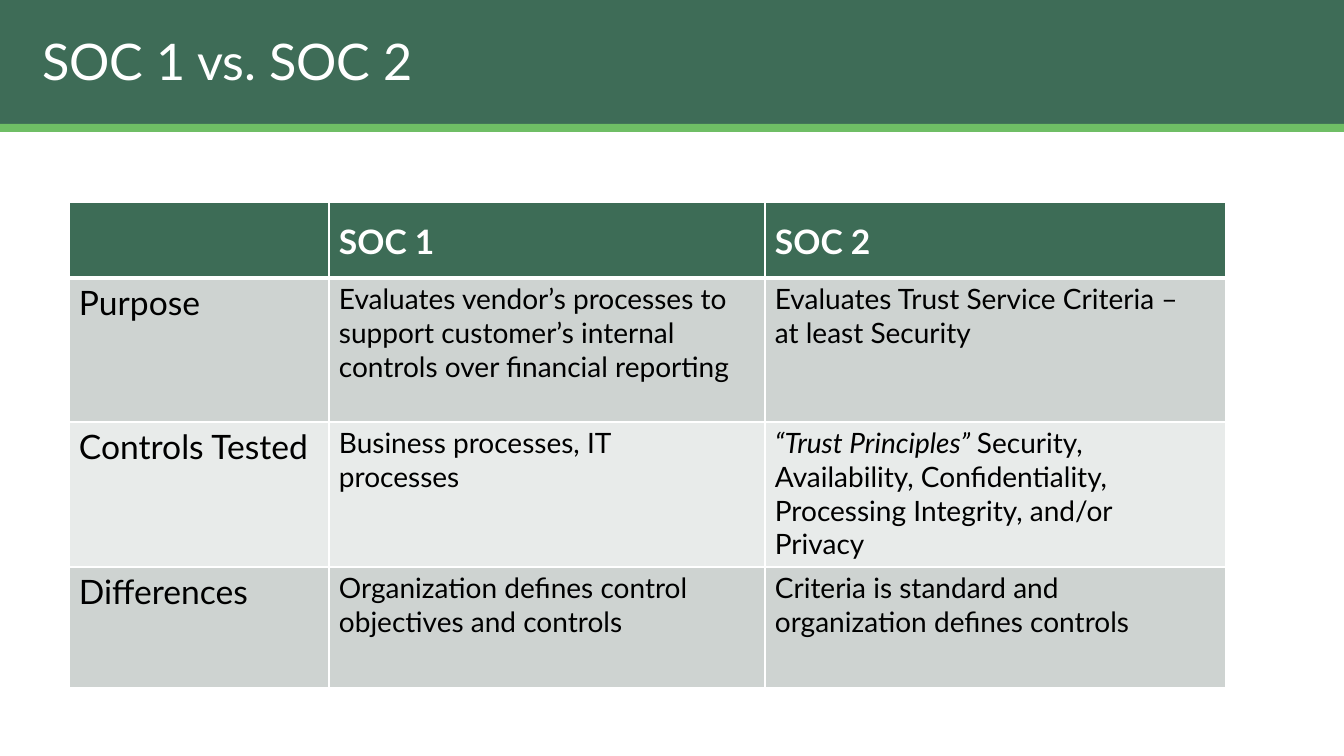
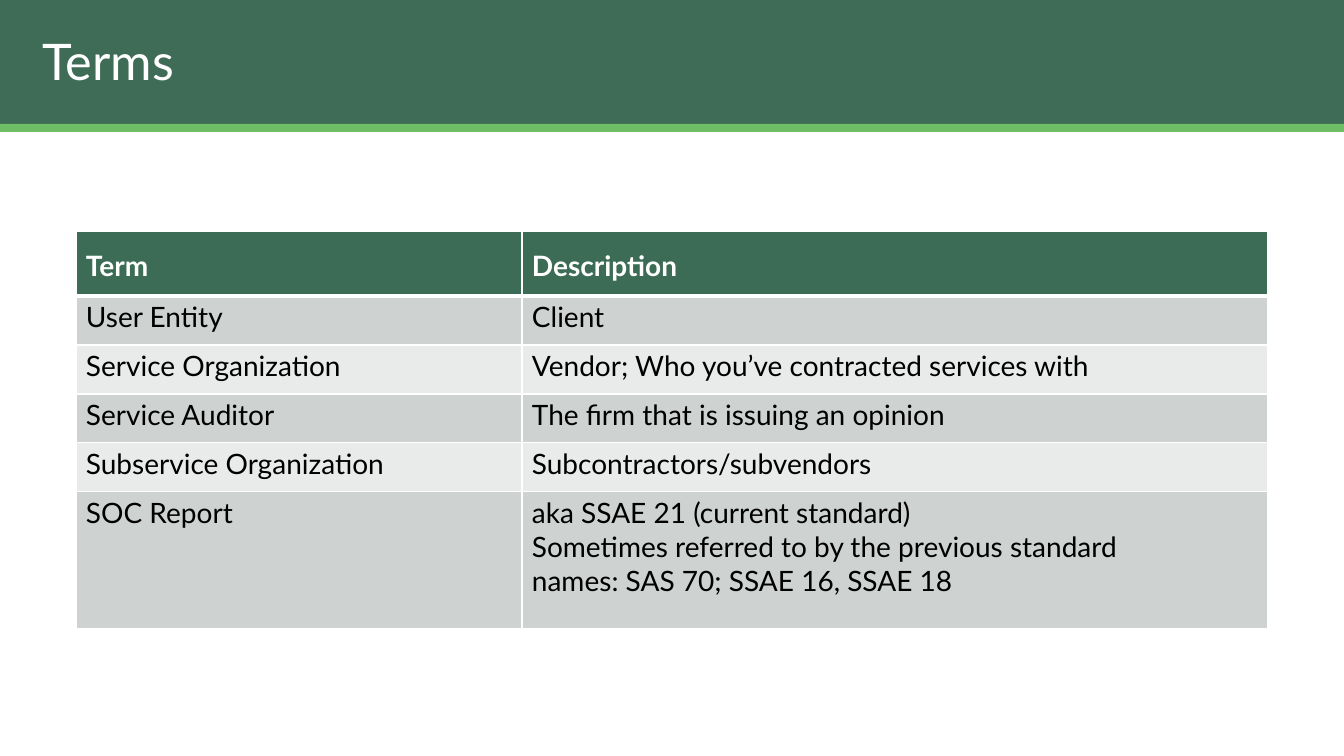
from dataclasses import dataclass
from typing import NamedTuple

from lxml import etree
from pptx import Presentation
from pptx import util as u
from pptx.dml.color import RGBColor
from pptx.enum import shapes, text
from pptx.oxml.ns import qn

SLIDE_WIDTH, SLIDE_HEIGHT = 1344, 756
EMU_PER_PX = u.Inches(1) / 100.8
FONT = "Lato"
COLORS = {
    "band": "3E6C57",
    "accent": "6FBE65",
    "header": "3D6C56",
    "odd_row": "CED3D1",
    "even_row": "E8EBEA",
    "white": "FFFFFF",
    "black": "000000",
}
TITLE_LAYOUT = 5


class Band(NamedTuple):
    top: int
    height: int
    color: str


class Column(NamedTuple):
    width: int
    right_inset: int
    size: int


class Lead(NamedTuple):
    """Cell text that opens with words in italics."""
    italic: str
    plain: str


CellText = str | Lead


@dataclass(frozen=True)
class Grid:
    title: str
    left: int
    top: int
    header_size: int
    columns: list[Column]
    heights: list[int]
    rows: list[list[CellText]]


BANDS = [Band(0, 126, "band"), Band(124, 8, "accent")]

GRIDS = [
    Grid(
        "SOC 1 vs. SOC 2", 69, 202, 24,
        [Column(260, 0, 24), Column(436, 33, 20), Column(461, 33, 20)],
        [76, 144, 145, 121],
        [
            ["", "SOC 1", "SOC 2"],
            ["Purpose",
             "Evaluates vendor’s processes to support customer’s internal "
             "controls over financial reporting",
             "Evaluates Trust Service Criteria – at least Security"],
            ["Controls Tested",
             "Business processes, IT processes",
             Lead("“Trust Principles” ",
                  "Security, Availability, Confidentiality, "
                  "Processing Integrity, and/or Privacy")],
            ["Differences",
             "Organization defines control objectives and controls",
             "Criteria is standard and organization defines controls"],
        ],
    ),
    Grid(
        "Terms", 76, 231, 20,
        [Column(446, 0, 20), Column(746, 100, 20)],
        [65, 49, 49, 49, 49, 137],
        [
            ["Term", "Description"],
            ["User Entity", "Client"],
            ["Service Organization", "Vendor; Who you’ve contracted services with"],
            ["Service Auditor", "The firm that is issuing an opinion"],
            ["Subservice Organization", "Subcontractors/subvendors"],
            ["SOC Report",
             "aka SSAE 21 (current standard)\n"
             "Sometimes referred to by the previous standard names: "
             "SAS 70; SSAE 16, SSAE 18"],
        ],
    ),
]


def px(length: int) -> u.Emu:
    return u.Emu(round(length * EMU_PER_PX))


def rgb(name: str) -> RGBColor:
    return RGBColor.from_string(COLORS[name])


def set_font(para, size: int, color: str, bold: bool = False) -> None:
    para.font.name = FONT
    para.font.size = u.Pt(size)
    para.font.bold = bold
    para.font.color.rgb = rgb(color)


def add_bands(page) -> None:
    """Draw the bands and move them to the layout, where all pages share them."""
    layout_tree = page.slide_layout.shapes._spTree
    for index, band in enumerate(BANDS):
        shape = page.shapes.add_shape(
            shapes.MSO_SHAPE.RECTANGLE,
            0, px(band.top), px(SLIDE_WIDTH), px(band.height))
        shape.shadow.inherit = False
        shape.fill.solid()
        shape.fill.fore_color.rgb = rgb(band.color)
        shape.line.fill.background()
        layout_tree.insert(2 + index, shape._element)


def set_title(page, words: str) -> None:
    title = page.shapes.title
    title.left, title.top, title.width, title.height = map(px, (32, 18, 989, 92))
    frame = title.text_frame
    frame.text = words
    frame.word_wrap = True
    frame.vertical_anchor = text.MSO_ANCHOR.MIDDLE
    para = frame.paragraphs[0]
    para.alignment = text.PP_ALIGN.LEFT
    para.line_spacing = 0.9
    set_font(para, 36, "white")


def set_borders(cell, row: int) -> None:
    """White cell edges, thicker between the header and the first body row."""
    widths = {"L": 1, "R": 1, "T": 3 if row == 1 else 1, "B": 3 if row == 0 else 1}
    properties = cell._tc.get_or_add_tcPr()
    for side, width in widths.items():
        edge = etree.SubElement(properties, qn(f"a:ln{side}"), w=str(u.Pt(width)))
        fill = etree.SubElement(edge, qn("a:solidFill"))
        etree.SubElement(fill, qn("a:srgbClr"), val=COLORS["white"])


def fill_cell(cell, content: CellText, row: int, column: Column,
              header_size: int) -> None:
    is_header = row == 0
    set_borders(cell, row)
    cell.fill.solid()
    cell.fill.fore_color.rgb = rgb(
        "header" if is_header else "odd_row" if row % 2 else "even_row")
    cell.margin_left, cell.margin_top = px(10), px(4)
    cell.margin_right, cell.margin_bottom = px(column.right_inset), 0
    cell.vertical_anchor = (
        text.MSO_ANCHOR.MIDDLE if is_header else text.MSO_ANCHOR.TOP)
    frame = cell.text_frame
    if isinstance(content, Lead):
        para = frame.paragraphs[0]
        span = para.add_run()
        span.text = content.italic
        span.font.italic = True
        para.add_run().text = content.plain
    else:
        frame.text = content
    for para in frame.paragraphs:
        if is_header:
            set_font(para, header_size, "white", bold=True)
        else:
            set_font(para, column.size, "black")


def add_grid(page, grid: Grid) -> None:
    width = sum(column.width for column in grid.columns)
    table = page.shapes.add_table(
        len(grid.rows), len(grid.columns),
        px(grid.left), px(grid.top), px(width), px(sum(grid.heights))).table
    table.horz_banding = False
    for index, column in enumerate(grid.columns):
        table.columns[index].width = px(column.width)
    for row, (height, contents) in enumerate(zip(grid.heights, grid.rows)):
        table.rows[row].height = px(height)
        for index, (column, content) in enumerate(zip(grid.columns, contents)):
            fill_cell(table.cell(row, index), content, row, column,
                      grid.header_size)


def main() -> None:
    deck = Presentation()
    deck.slide_width, deck.slide_height = px(SLIDE_WIDTH), px(SLIDE_HEIGHT)
    layout = deck.slide_layouts[TITLE_LAYOUT]
    pages = [deck.slides.add_slide(layout) for _ in GRIDS]
    add_bands(pages[0])
    for page, grid in zip(pages, GRIDS):
        set_title(page, grid.title)
        add_grid(page, grid)
    deck.save("out.pptx")


if __name__ == "__main__":
    main()
